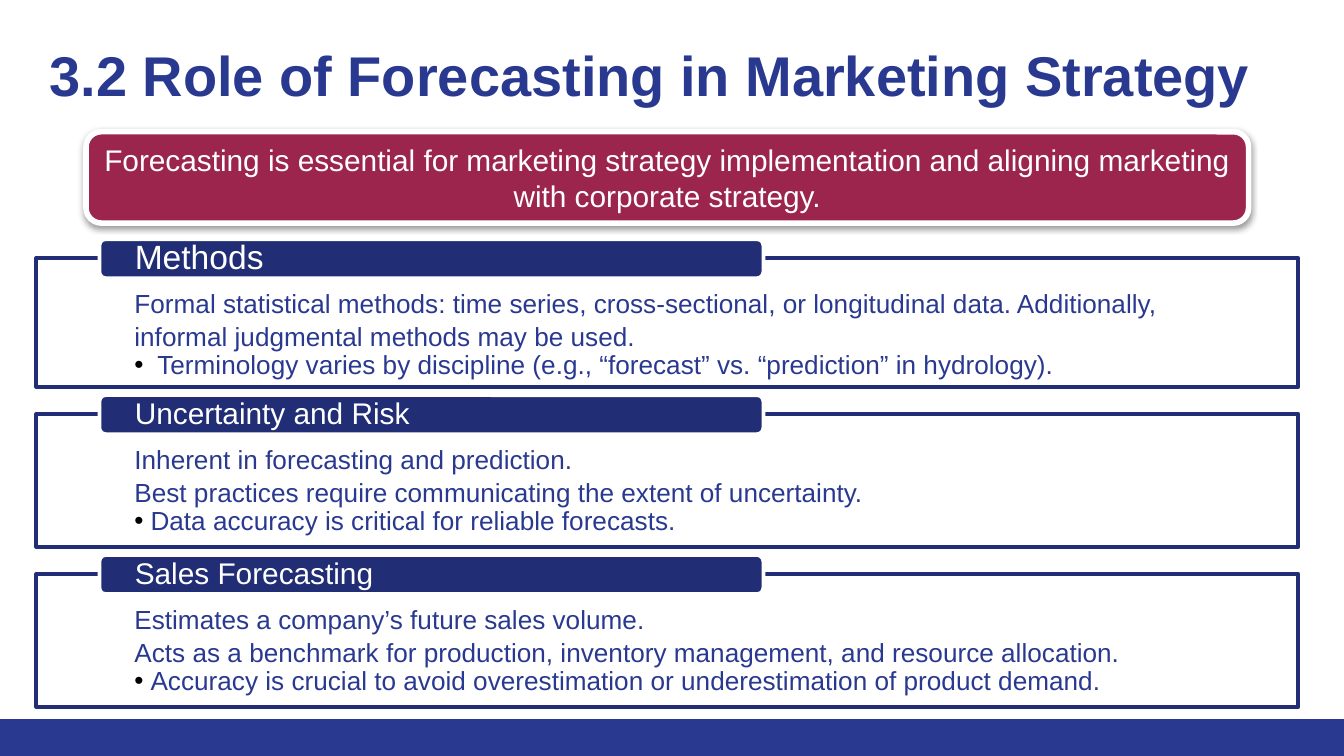
from lxml import etree
from pptx import Presentation
from pptx.dml.color import RGBColor
from pptx.enum.shapes import MSO_SHAPE
from pptx.enum.text import MSO_ANCHOR, PP_ALIGN
from pptx.oxml import parse_xml
from pptx.oxml.ns import nsdecls, qn
from pptx.util import Inches, Pt

COLORS = {"blue": "2A3990", "navy": "212D74", "red": "9C254D",
          "white": "FFFFFF", "black": "000000"}
TITLE = "3.2 Role of Forecasting in Marketing Strategy"
BANNER = ("Forecasting is essential for marketing strategy implementation "
          "and aligning marketing with corporate strategy.")
# heading, heading size, box top, box height, plain lines, bullet line
PANELS = [
    ("Methods", 18, 1.92, 0.96,
     ["Formal statistical methods: time series, cross-sectional, or "
      "longitudinal data. Additionally, informal judgmental methods may be used."],
     " Terminology varies by discipline (e.g., “forecast” vs. “prediction” in hydrology)."),
    ("Uncertainty and Risk", 16, 3.08, 0.99,
     ["Inherent in forecasting and prediction.",
      "Best practices require communicating the extent of uncertainty."],
     "Data accuracy is critical for reliable forecasts."),
    ("Sales Forecasting", 16, 4.27, 0.99,
     ["Estimates a company’s future sales volume.",
      "Acts as a benchmark for production, inventory management, and resource allocation."],
     "Accuracy is crucial to avoid overestimation or underestimation of product demand."),
]
LEFT, WIDTH = 0.27, 9.39
TAB_LEFT, TAB_WIDTH, TAB_HEIGHT, TAB_RISE = 0.74, 4.94, 0.29, 0.14

prs = Presentation()
prs.slide_width, prs.slide_height = Inches(10), Inches(5.625)
slide = prs.slides.add_slide(prs.slide_layouts[6])


def rgb(name):
    return RGBColor.from_string(COLORS[name])


def add_box(kind, area, fill, line=None, width=2):
    box = slide.shapes.add_shape(kind, *map(Inches, area))
    box.shadow.inherit = False
    box.fill.solid()
    box.fill.fore_color.rgb = rgb(fill)
    if line:
        box.line.color.rgb = rgb(line)
        box.line.width = Pt(width)
    else:
        box.line.fill.background()
    return box


def write(shape, lines, size, color, insets, anchor=MSO_ANCHOR.TOP,
          align=PP_ALIGN.LEFT, bold=False):
    frame = shape.text_frame
    frame.word_wrap = True
    frame.vertical_anchor = anchor
    side, top, bottom = map(Inches, insets)
    frame.margin_left = frame.margin_right = side
    frame.margin_top, frame.margin_bottom = top, bottom
    frame.text = "\n".join(lines)
    for para in frame.paragraphs:
        para.alignment = align
        for run in para.runs:
            run.font.name, run.font.size = "Arial", Pt(size)
            run.font.bold = bold
            run.font.color.rgb = rgb(color)
    return frame.paragraphs


def add_bullet(para):
    props = para._p.get_or_add_pPr()
    props.set("marL", str(Inches(0.12)))
    props.set("indent", str(-Inches(0.12)))
    tint = etree.SubElement(props, qn("a:buClr"))
    etree.SubElement(tint, qn("a:srgbClr"), val=COLORS["black"])
    etree.SubElement(props, qn("a:buFont"), typeface="Arial")
    etree.SubElement(props, qn("a:buChar"), char="•")


def add_shadow(shape):
    effects = shape._element.spPr.find(qn("a:effectLst"))
    effects.append(parse_xml(
        f'<a:outerShdw {nsdecls("a")} blurRad="{Pt(3.1)}" dist="{Pt(1.6)}" '
        f'dir="5400000" rotWithShape="0"><a:srgbClr val="{COLORS["black"]}">'
        '<a:alpha val="38000"/></a:srgbClr></a:outerShdw>'))


def add_panel(head, size, top, height, lines, point):
    box = add_box(MSO_SHAPE.RECTANGLE, (LEFT, top, WIDTH, height), "white", "navy")
    paras = write(box, lines + [point], 14, "blue", (0.73, 0.2, 0.11))
    for para in paras:
        para.line_spacing = 1.07
    paras[-1].line_spacing = 0.9
    add_bullet(paras[-1])

    tab = add_box(MSO_SHAPE.ROUNDED_RECTANGLE,
                  (TAB_LEFT, top - TAB_RISE, TAB_WIDTH, TAB_HEIGHT), "navy", "white")
    tab.adjustments[0] = 0.16
    label = write(tab, [head], size, "white", (0.25, 0.01, 0.01), MSO_ANCHOR.MIDDLE)
    label[0].line_spacing = 0.9


add_box(MSO_SHAPE.RECTANGLE, (0, 5.35, 10, 0.28), "blue")

title = slide.shapes.add_textbox(*map(Inches, (LEFT, 0.2, WIDTH, 0.89)))
write(title, [TITLE], 30, "blue", (0.1, 0.1, 0.1), bold=True)

banner = add_box(MSO_SHAPE.ROUNDED_RECTANGLE, (0.64, 0.98, 8.65, 0.68),
                 "red", "white", 3)
add_shadow(banner)
write(banner, [BANNER], 16, "white", (0.1, 0.05, 0.05),
      MSO_ANCHOR.MIDDLE, PP_ALIGN.CENTER)

for panel in PANELS:
    add_panel(*panel)

prs.save("out.pptx")
